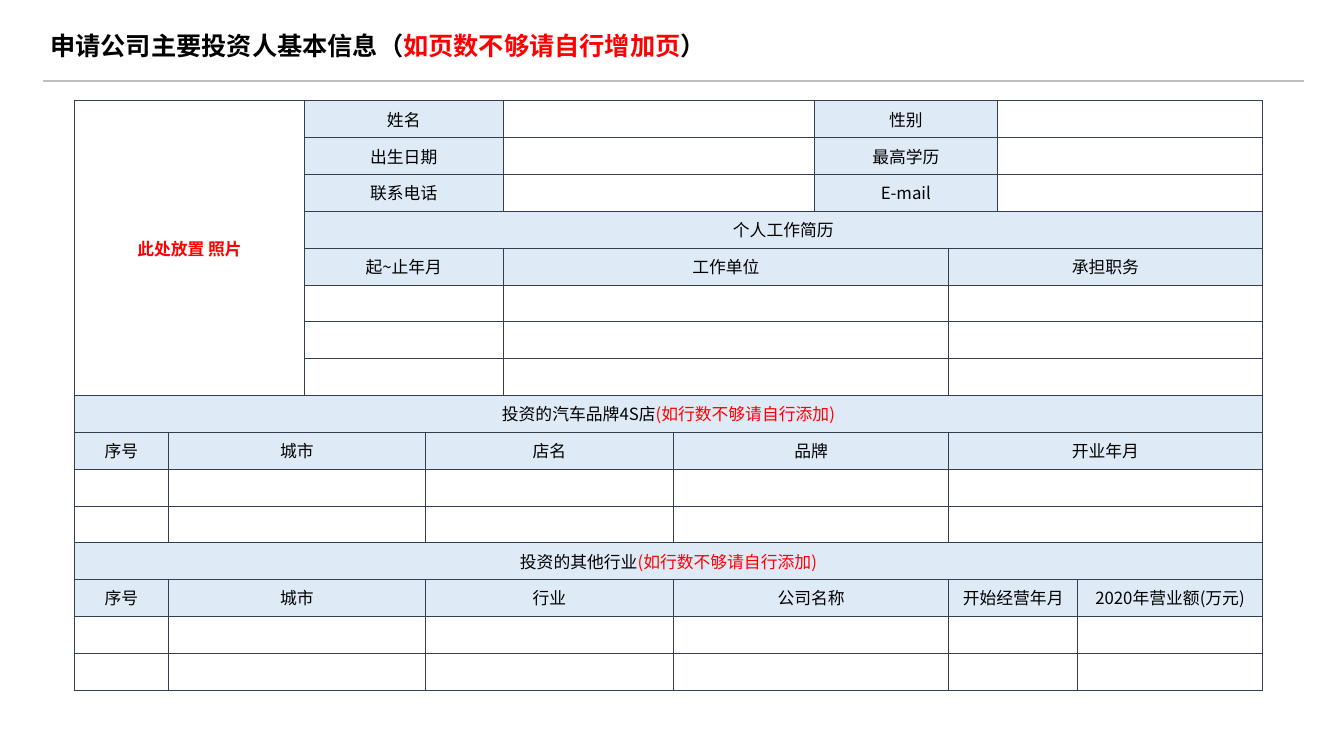
from lxml import etree
from pptx import Presentation
from pptx.dml.color import RGBColor
from pptx.enum.shapes import MSO_CONNECTOR
from pptx.enum.text import MSO_ANCHOR, MSO_AUTO_SIZE, PP_ALIGN
from pptx.oxml import parse_xml
from pptx.oxml.ns import nsdecls, qn
from pptx.util import Inches, Pt

FONT = "Noto Sans CJK SC"
BLACK = RGBColor(0, 0, 0)
RED = RGBColor(0xFF, 0, 0)
WHITE = RGBColor(0xFF, 0xFF, 0xFF)
PALE = RGBColor(0xDE, 0xEB, 0xF7)
GREY = RGBColor(0xBF, 0xBF, 0xBF)
NAVY = RGBColor(0x33, 0x3F, 0x50)

TITLE = [("申请公司主要投资人基本信息（", BLACK),
         ("如页数不够请自行增加页", RED), ("）", BLACK)]
PHOTO = [("此处放置 照片", RED)]
MORE = "(如行数不够请自行添加)"

COLS = [0.93, 1.35, 1.2, 0.77, 1.69, 1.4, 1.33, 0.48, 0.8, 1.83]
LEFT, TOP, HEIGHT = 0.74, 1, 5.85
PHOTO_ROWS, PHOTO_COLS = 8, 2

# Column spans of each kind of row; a row that spans less than the
# whole width starts to the right of the photo cell.
PERSON = (2, 2, 2, 2)
HEAD = (8,)
CAREER = (2, 3, 3)
BAND = (10,)
SHOPS = (1, 2, 2, 2, 3)
TRADES = (1, 2, 2, 2, 2, 1)

ROWS = [
    (PERSON, ["姓名", "", "性别", ""]),
    (PERSON, ["出生日期", "", "最高学历", ""]),
    (PERSON, ["联系电话", "", "E-mail", ""]),
    (HEAD, ["个人工作简历"]),
    (CAREER, ["起~止年月", "工作单位", "承担职务"]),
    (CAREER, []),
    (CAREER, []),
    (CAREER, []),
    (BAND, ["投资的汽车品牌4S店"]),
    (SHOPS, ["序号", "城市", "店名", "品牌", "开业年月"]),
    (SHOPS, []),
    (SHOPS, []),
    (BAND, ["投资的其他行业"]),
    (TRADES, ["序号", "城市", "行业", "公司名称", "开始经营年月",
              "2020年营业额(万元)"]),
    (TRADES, []),
    (TRADES, []),
]


def write(frame, parts, size, bold):
    para = frame.paragraphs[0]
    para.alignment = PP_ALIGN.CENTER
    para.line_spacing = Pt(17)
    for text, color in parts:
        run = para.add_run()
        run.text = text
        font = run.font
        font.name, font.size, font.bold = FONT, Pt(size), bold
        font.color.rgb = color
        east = etree.SubElement(run._r.get_or_add_rPr(), qn("a:ea"))
        east.set("typeface", FONT)


def border(cell):
    props = cell._tc.get_or_add_tcPr()
    for place, side in enumerate(("lnL", "lnR", "lnT", "lnB")):
        props.insert(place, parse_xml(
            f'<a:{side} {nsdecls("a")} w="{Pt(0.5)}"><a:solidFill>'
            f'<a:srgbClr val="{NAVY}"/></a:solidFill></a:{side}>'))


def fill_cell(table, row, col, parts, color, high=1, wide=1, bold=False):
    cell = table.cell(row, col)
    if high * wide > 1:
        cell.merge(table.cell(row + high - 1, col + wide - 1))
    cell.fill.solid()
    cell.fill.fore_color.rgb = color
    write(cell.text_frame, parts, 12, bold)


def add_form(slide):
    shape = slide.shapes.add_table(
        len(ROWS), len(COLS), Inches(LEFT), Inches(TOP),
        Inches(sum(COLS)), Inches(HEIGHT))
    table = shape.table
    table.first_row = table.horz_banding = False
    for col, width in zip(table.columns, COLS):
        col.width = Inches(width)
    for row in table.rows:
        row.height = Inches(HEIGHT / len(ROWS))
    for cell in table.iter_cells():
        cell.margin_left = cell.margin_right = Inches(0.02)
        cell.margin_top = cell.margin_bottom = 0
        cell.vertical_anchor = MSO_ANCHOR.MIDDLE
        border(cell)

    fill_cell(table, 0, 0, PHOTO, WHITE, PHOTO_ROWS, PHOTO_COLS, True)
    for row, (spans, labels) in enumerate(ROWS):
        col = len(COLS) - sum(spans)
        for wide, label in zip(spans, labels or [""] * len(spans)):
            parts = [(label, BLACK)] if label else []
            if spans == BAND:
                parts.append((MORE, RED))
            fill_cell(table, row, col, parts, PALE if label else WHITE,
                      wide=wide)
            col += wide


def add_title(slide):
    rule = slide.shapes.add_connector(
        MSO_CONNECTOR.STRAIGHT, Inches(0.43), Inches(0.8),
        Inches(12.93), Inches(0.8))
    rule.line.color.rgb = GREY
    rule.line.width = Pt(1.5)
    etree.SubElement(rule._element.spPr, qn("a:effectLst"))
    box = slide.shapes.add_textbox(
        Inches(0.4), Inches(0.32), Inches(6.7), Inches(0.34))
    frame = box.text_frame
    frame.word_wrap = False
    frame.auto_size = MSO_AUTO_SIZE.SHAPE_TO_FIT_TEXT
    write(frame, TITLE, 18, True)


def main():
    deck = Presentation()
    deck.slide_width, deck.slide_height = Inches(13.33), Inches(7.5)
    slide = deck.slides.add_slide(deck.slide_layouts[6])
    add_title(slide)
    add_form(slide)
    deck.save("out.pptx")


if __name__ == "__main__":
    main()
